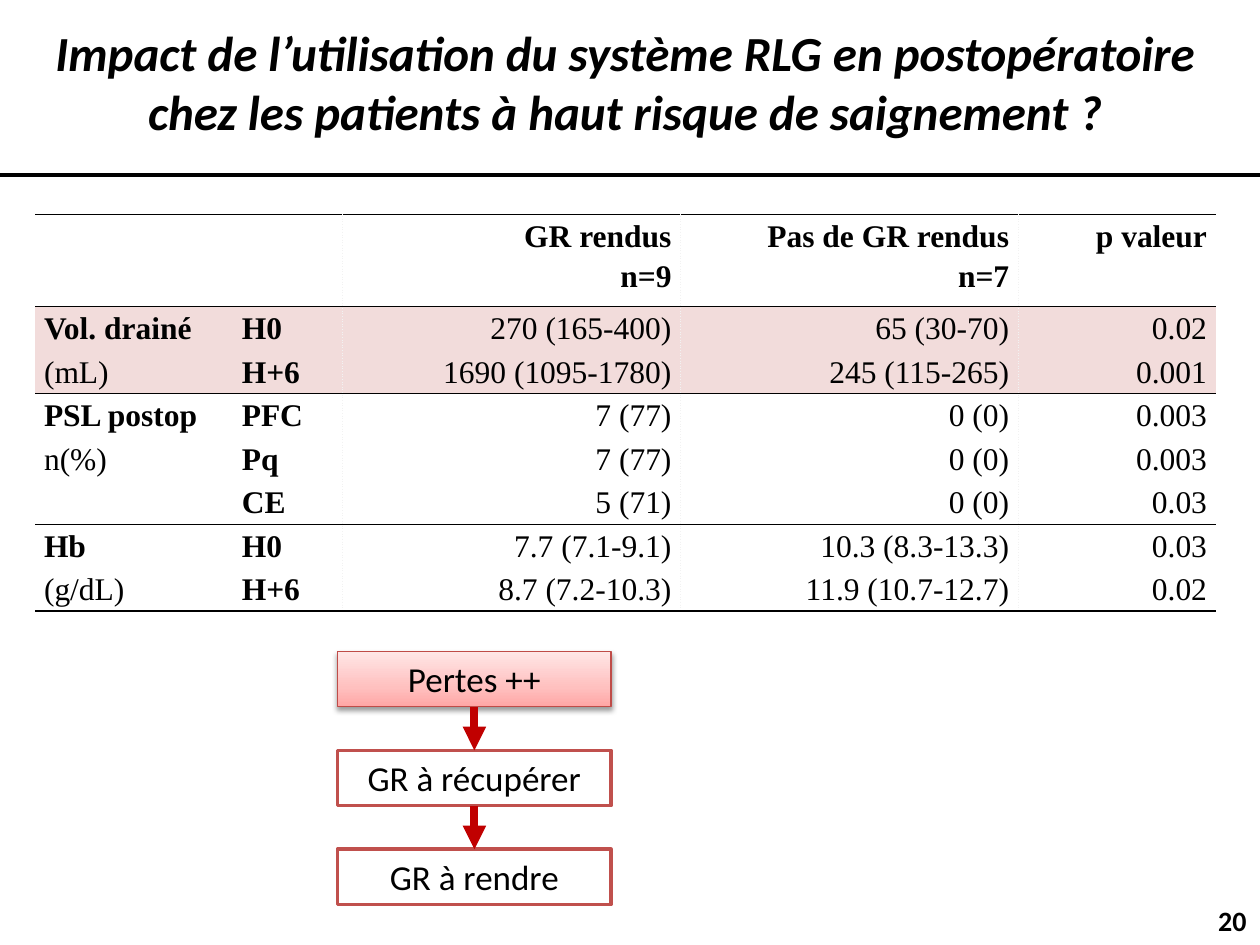
from dataclasses import dataclass

from lxml import etree
from pptx import Presentation
from pptx import util as u
from pptx.dml.color import RGBColor
from pptx.enum import dml, shapes, text
from pptx.oxml import parse_xml
from pptx.oxml.ns import qn

XMLNS = 'xmlns:a="http://schemas.openxmlformats.org/drawingml/2006/main"'
NO_STYLE = "{2D5ABB26-0587-4C30-8999-92F81FD0307C}"
BLACK, WHITE, PINK, RED, FRAME = "000000", "FFFFFF", "F2DCDB", "C00000", "C0504D"
SLIDE_WIDTH, SLIDE_HEIGHT = u.Inches(10), u.Inches(7.5)
LEFT, CENTER, RIGHT = text.PP_ALIGN.LEFT, text.PP_ALIGN.CENTER, text.PP_ALIGN.RIGHT


@dataclass
class Box:
    """A rectangle with text; lengths are percentages of the slide."""
    words: str
    left: float
    top: float
    width: float
    height: float
    size: float
    line: str = ""
    line_width: float = 2
    bold: bool = False
    italic: bool = False
    align: text.PP_ALIGN = CENTER
    anchor: text.MSO_ANCHOR = text.MSO_ANCHOR.MIDDLE
    wrap: bool = True
    grow: bool = False


@dataclass
class Row:
    cells: tuple
    fill: str = ""
    top: float = 0
    bottom: float = 0


STEPS = ("Pertes ++", "GR à récupérer", "GR à rendre")
STEP_TOP, STEP_PITCH = 68.93, 10.47
TABLE_LEFT, TABLE_TOP, TABLE_HEIGHT, HEADER_HEIGHT = 2.8, 22.67, 42, 9.73
COLUMNS = (15.7, 8.7, 26.8, 26.8, 15.7)
ROWS = (
    Row(("", "", "GR rendus\nn=9", "Pas de GR rendus\nn=7", "p valeur"), top=1, bottom=0.25),
    Row(("Vol. drainé", "H0", "270 (165-400)", "65 (30-70)", "0.02"), PINK, top=0.25),
    Row(("(mL)", "H+6", "1690 (1095-1780)", "245 (115-265)", "0.001"), PINK, bottom=0.25),
    Row(("PSL postop", "PFC", "7 (77)", "0 (0)", "0.003"), top=0.25),
    Row(("n(%)", "Pq", "7 (77)", "0 (0)", "0.003")),
    Row(("", "CE", "5 (71)", "0 (0)", "0.03"), bottom=0.25),
    Row(("Hb", "H0", "7.7 (7.1-9.1)", "10.3 (8.3-13.3)", "0.03"), top=0.25),
    Row(("(g/dL)", "H+6", "8.7 (7.2-10.3)", "11.9 (10.7-12.7)", "0.02"), bottom=1),
)


def wide(percent: float) -> int:
    return int(SLIDE_WIDTH * percent / 100)


def high(percent: float) -> int:
    return int(SLIDE_HEIGHT * percent / 100)


def colour(code: str) -> RGBColor:
    return RGBColor.from_string(code)


def style_text(frame, font: str, size: float, bold: bool, align, italic: bool = False) -> None:
    for para in frame.paragraphs:
        para.alignment = align
        for span in para.runs:
            span.font.name, span.font.size = font, u.Pt(size)
            span.font.bold, span.font.italic = bold, italic
            span.font.color.rgb = colour(BLACK)


def draw_box(page, box: Box):
    shape = page.shapes.add_shape(shapes.MSO_SHAPE.RECTANGLE, wide(box.left), high(box.top),
                                  wide(box.width), high(box.height))
    shape.shadow.inherit = False
    shape.fill.solid()
    shape.fill.fore_color.rgb = colour(WHITE)
    if box.line:
        shape.line.color.rgb = colour(box.line)
        shape.line.width = u.Pt(box.line_width)
    else:
        shape.line.fill.background()
    frame = shape.text_frame
    frame.word_wrap, frame.vertical_anchor = box.wrap, box.anchor
    if box.grow:
        frame.auto_size = text.MSO_AUTO_SIZE.SHAPE_TO_FIT_TEXT
    frame.paragraphs[0].text = box.words
    style_text(frame, "Calibri", box.size, box.bold, box.align, box.italic)
    return shape


def highlight(shape) -> None:
    """Give a three-stop red gradient and a soft shadow below."""
    shape.fill.gradient()
    shape.fill.gradient_angle = 90
    stops = shape.element.spPr.find(f"{qn('a:gradFill')}/{qn('a:gsLst')}")
    for stop in list(stops):
        stops.remove(stop)
    for share, code in ((0, "FFA6A5"), (35, "FFC0BF"), (100, "FFE7E7")):
        stops.append(parse_xml(f'<a:gs {XMLNS} pos="{share * 1000}"><a:srgbClr val="{code}"/></a:gs>'))
    effects = shape.element.spPr.find(qn("a:effectLst"))
    effects.append(parse_xml(
        f'<a:outerShdw {XMLNS} blurRad="{u.Pt(3.1)}" dist="{u.Pt(1.6)}" dir="5400000" '
        f'rotWithShape="0"><a:srgbClr val="{BLACK}"><a:alpha val="38000"/></a:srgbClr></a:outerShdw>'))


def draw_arrow(page, upper, lower) -> None:
    arrow = page.shapes.add_connector(shapes.MSO_CONNECTOR.STRAIGHT, 0, 0, 0, 0)
    arrow.begin_connect(upper, 2)
    arrow.end_connect(lower, 0)
    arrow.line.color.rgb = colour(RED)
    arrow.line.width = u.Pt(4.5)
    arrow.line.dash_style = dml.MSO_LINE.SOLID
    etree.SubElement(arrow.line._ln, qn("a:tailEnd"), type="triangle")
    etree.SubElement(arrow.element.spPr, qn("a:effectLst"))


def set_borders(cell, borders: list) -> None:
    """Draw (side, width, colour, dash) borders; a zero width hides one."""
    properties = cell._tc.get_or_add_tcPr()
    for place, (side, width, code, dash) in enumerate(borders):
        paint = (f'<a:solidFill><a:srgbClr val="{code}"/></a:solidFill><a:prstDash val="{dash}"/>'
                 if width else "<a:noFill/>")
        properties.insert(place, parse_xml(f'<a:ln{side} {XMLNS} w="{u.Pt(width)}">{paint}</a:ln{side}>'))


def fill_cell(cell, row: Row, column: int, header: bool) -> None:
    words = row.cells[column]
    cell.margin_left = cell.margin_right = u.Inches(0.07)
    cell.margin_top = cell.margin_bottom = 0
    cell.text_frame.text = words
    bold = header or column == 1 or (column == 0 and row.top > 0)
    style_text(cell.text_frame, "Times New Roman", 18, bold, RIGHT if column > 1 else LEFT)
    for para in cell.text_frame.paragraphs:
        para.line_spacing = 1.15
    if row.fill:
        cell.fill.solid()
        cell.fill.fore_color.rgb = colour(row.fill)
    else:
        cell.fill.background()
    dotted_left = 0.25 if column > 1 else 0
    dotted_right = 0.25 if 0 < column < len(COLUMNS) - 1 else 0
    set_borders(cell, [("L", dotted_left, "F2F2F2", "sysDot"), ("R", dotted_right, "F2F2F2", "sysDot"),
                       ("T", row.top, BLACK, "solid"), ("B", row.bottom, BLACK, "solid")])


def draw_table(page) -> None:
    table = page.shapes.add_table(len(ROWS), len(COLUMNS), wide(TABLE_LEFT), high(TABLE_TOP),
                                  wide(sum(COLUMNS)), high(TABLE_HEIGHT)).table
    table.first_row = table.horz_banding = False
    table._tbl.tblPr.find(qn("a:tableStyleId")).text = NO_STYLE
    for column, width in zip(table.columns, COLUMNS):
        column.width = wide(width)
    body_height = (TABLE_HEIGHT - HEADER_HEIGHT) / (len(ROWS) - 1)
    for index, row in enumerate(ROWS):
        table.rows[index].height = high(body_height if index else HEADER_HEIGHT)
        for column in range(len(COLUMNS)):
            fill_cell(table.cell(index, column), row, column, index == 0)


def main() -> None:
    deck = Presentation()
    deck.slide_width, deck.slide_height = SLIDE_WIDTH, SLIDE_HEIGHT
    page = deck.slides.add_slide(deck.slide_layouts[6])
    draw_box(page, Box("Impact de l’utilisation du système RLG en postopératoire \v"
                       "chez les patients à haut risque de saignement ? ",
                       -4.3, -1.33, 108.7, 19.87, 28, line=BLACK, bold=True, italic=True))
    draw_box(page, Box("20", 95.7, 94.67, 4.3, 5.33, 16, bold=True, align=LEFT, wrap=False))
    steps = [draw_box(page, Box(words, 26.8, STEP_TOP + index * STEP_PITCH, 21.7, 5.87, 20,
                                line=FRAME if index else "BF4C48", line_width=2 if index else 0.75,
                                anchor=text.MSO_ANCHOR.TOP, grow=True))
             for index, words in enumerate(STEPS)]
    highlight(steps[0])
    for upper, lower in zip(steps, steps[1:]):
        draw_arrow(page, upper, lower)
    draw_table(page)
    deck.save("out.pptx")


if __name__ == "__main__":
    main()
